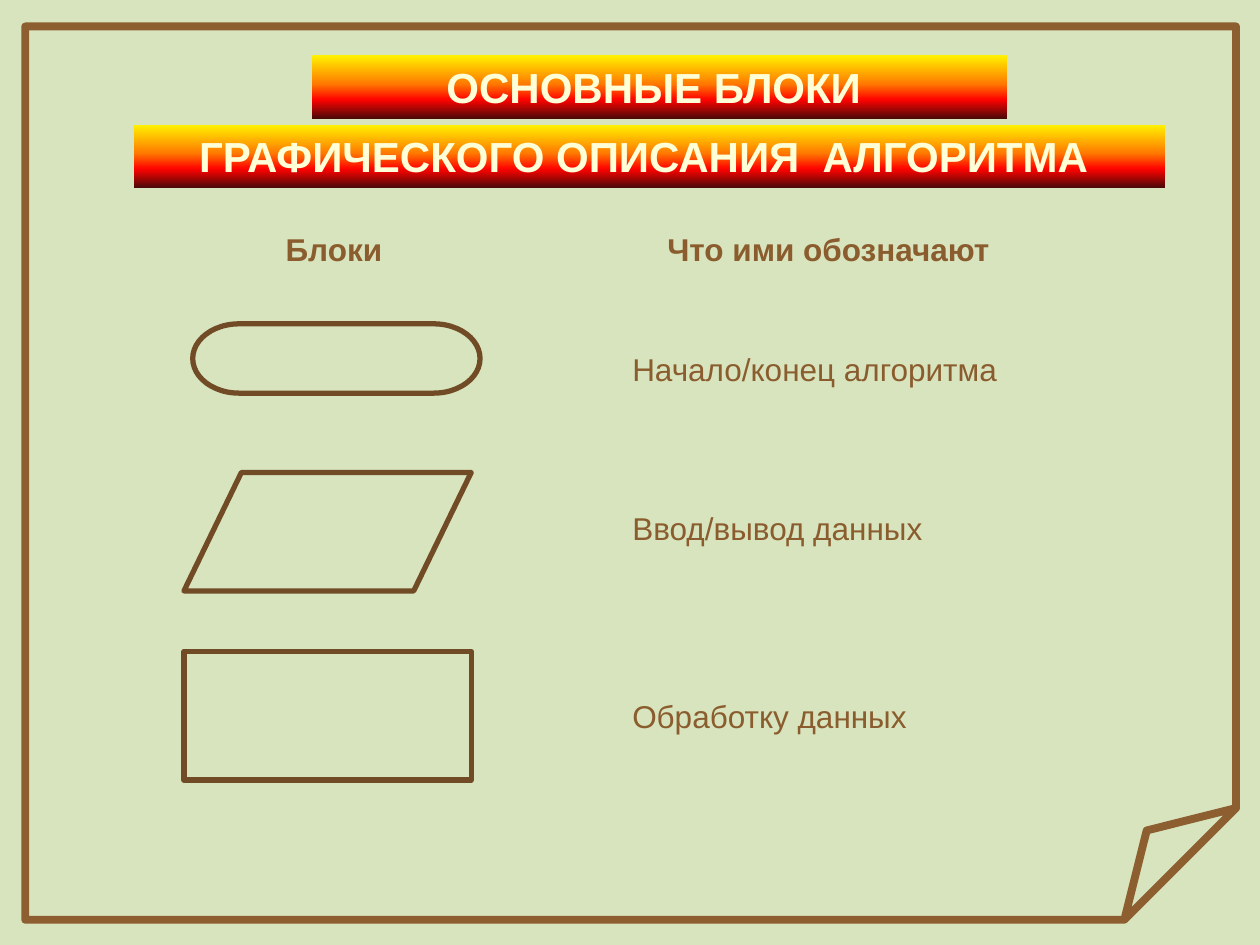
from lxml.etree import SubElement
from pptx import Presentation
from pptx.dml.color import RGBColor
from pptx.enum.shapes import MSO_SHAPE as Shape
from pptx.enum.text import MSO_ANCHOR as Anchor, MSO_AUTO_SIZE as AutoSize, PP_ALIGN as Align
from pptx.oxml.ns import qn
from pptx.util import Inches, Pt

# Content
BANNERS = [  # text, left, top, width
    ("ОСНОВНЫЕ БЛОКИ ", 2.48, 0.44, 5.51),
    ("ГРАФИЧЕСКОГО ОПИСАНИЯ  АЛГОРИТМА ", 1.06, 0.99, 8.19),
]
HEADINGS = [("Блоки", 1.85, 1.6), ("Что ими обозначают", 4.92, 3.31)]  # text, left, width
BLOCKS = [  # preset, left, top, height, meaning, top of meaning
    (Shape.FLOWCHART_TERMINATOR, 1.53, 2.57, 0.55, "Начало/конец алгоритма", 2.73),
    (Shape.FLOWCHART_DATA, 1.46, 3.75, 0.94, "Ввод/вывод данных", 3.99),
    (Shape.FLOWCHART_PROCESS, 1.46, 5.17, 1.02, "Обработку данных", 5.48),
]
COLORS = {"paper": "D7E4BD", "frame": "8D5E2F", "block": "714B25",
          "text": "8A5C2E", "banner": "FFFFD7"}
FLAME = [(0, "FFF200"), (45, "FF7A00"), (70, "FF0300"), (100, "4D0808")]
FONT = "Arial"
BANNER_H, BLOCK_W, LABEL_H = 0.5, 2.28, 0.4
HEADING_TOP, MEANING_LEFT, MEANING_W = 1.78, 4.92, 3.54

prs = Presentation()
prs.slide_width, prs.slide_height = Inches(10), Inches(7.5)
slide = prs.slides.add_slide(prs.slide_layouts[5])
slide.background.fill.solid()
slide.background.fill.fore_color.rgb = RGBColor.from_string(COLORS["paper"])


def add_outline(preset, box, color, width):
    outline = slide.shapes.add_shape(preset, *map(Inches, box))
    outline.shadow.inherit = False
    outline.fill.background()
    outline.line.color.rgb = RGBColor.from_string(color)
    outline.line.width = Pt(width)
    return outline


def write(holder, text, size, color, bold=False, align=Align.LEFT):
    frame = holder.text_frame
    frame.word_wrap = True
    frame.auto_size = AutoSize.NONE
    frame.vertical_anchor = Anchor.TOP
    line = frame.paragraphs[0]
    line.text, line.alignment = text, align
    line.font.name, line.font.size, line.font.bold = FONT, Pt(size), bold
    line.font.color.rgb = RGBColor.from_string(color)


def add_label(text, left, top, width, **style):
    label = slide.shapes.add_textbox(*map(Inches, (left, top, width, LABEL_H)))
    write(label, text, 18, COLORS["text"], **style)


def fill_flame(banner):
    banner.fill.gradient()
    banner.fill.gradient_angle = 270
    stops = banner._element.spPr.find(".//" + qn("a:gsLst"))
    for stop in list(stops):
        stops.remove(stop)
    for percent, color in FLAME:
        stop = SubElement(stops, qn("a:gs"), pos=str(percent * 1000))
        SubElement(stop, qn("a:srgbClr"), val=color)


# Page frame, its folded corner an eighth of the height
page = add_outline(Shape.FOLDED_CORNER, (0.2, 0.21, 9.61, 7.09), COLORS["frame"], 4.5)
guides = page._element.spPr.find(".//" + qn("a:avLst"))
SubElement(guides, qn("a:gd"), name="adj", fmla="val 12500")

# Title in two banners
second_banner = slide.shapes.add_shape(Shape.RECTANGLE, 0, 0, 0, 0)
second_banner.shadow.inherit = False
second_banner.line.fill.background()
for banner, (text, left, top, width) in zip((slide.shapes.title, second_banner), BANNERS):
    banner.left, banner.top = Inches(left), Inches(top)
    banner.width, banner.height = Inches(width), Inches(BANNER_H)
    fill_flame(banner)
    write(banner, text, 24, COLORS["banner"], bold=True, align=Align.CENTER)

# Column headings
for text, left, width in HEADINGS:
    add_label(text, left, HEADING_TOP, width, bold=True, align=Align.CENTER)

# Flowchart blocks and their meanings
for preset, left, top, height, meaning, meaning_top in BLOCKS:
    add_outline(preset, (left, top, BLOCK_W, height), COLORS["block"], 3)
    add_label(meaning, MEANING_LEFT, meaning_top, MEANING_W)

prs.save("out.pptx")
